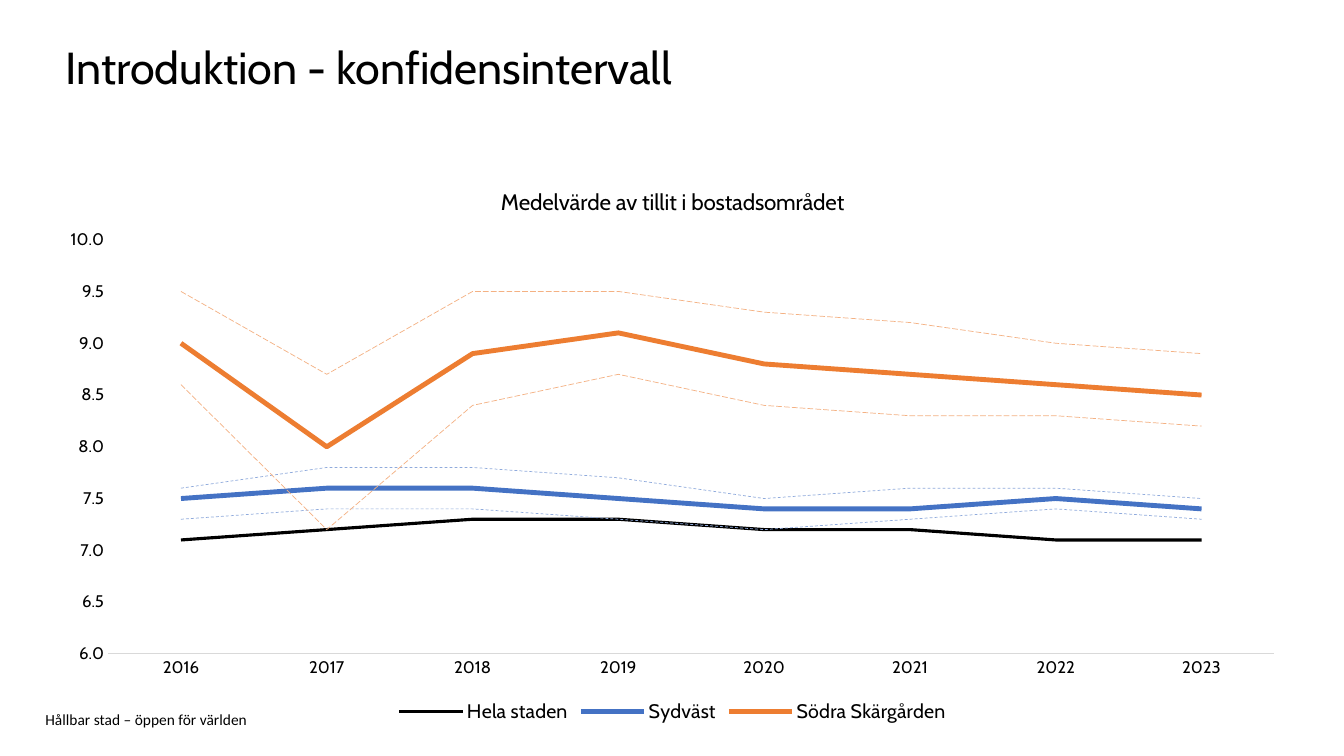
from lxml import etree
from pptx import Presentation
from pptx.chart.data import CategoryChartData
from pptx.dml.color import RGBColor
from pptx.enum import chart as ch, dml, text
from pptx.oxml import parse_xml
from pptx.oxml.ns import nsdecls, qn
from pptx.util import Inches, Pt

COLORS = {
    "text": "000000", "axis": "D9D9D9",
    "city": "000000",
    "southwest": "4472C4", "southwest_bound": "8FAADC",
    "archipelago": "ED7D31", "archipelago_bound": "F4B183",
}
DASH, LONG_DASH = dml.MSO_LINE.DASH, dml.MSO_LINE.LONG_DASH
YEARS = [str(year) for year in range(2016, 2024)]
# name, values, colour, line width, dash
TRUST = [
    ("Hela staden", (7.1, 7.2, 7.3, 7.3, 7.2, 7.2, 7.1, 7.1), "city", 2.25, None),
    ("Sydväst", (7.5, 7.6, 7.6, 7.5, 7.4, 7.4, 7.5, 7.4), "southwest", 3.5, None),
    ("Series 3", (7.3, 7.4, 7.4, 7.3, 7.2, 7.3, 7.4, 7.3), "southwest_bound", 0.5, DASH),
    ("Series 4", (7.6, 7.8, 7.8, 7.7, 7.5, 7.6, 7.6, 7.5), "southwest_bound", 0.5, DASH),
    ("Södra Skärgården", (9.0, 8.0, 8.9, 9.1, 8.8, 8.7, 8.6, 8.5), "archipelago", 3.5, None),
    ("Series 6", (8.6, 7.2, 8.4, 8.7, 8.4, 8.3, 8.3, 8.2), "archipelago_bound", 0.5, LONG_DASH),
    ("Series 7", (9.5, 8.7, 9.5, 9.5, 9.3, 9.2, 9.0, 8.9), "archipelago_bound", 0.5, LONG_DASH),
]


def set_layout(parent, index, **fractions):
    """Place a chart part by fractions of the chart area."""
    for old in parent.findall(qn("c:layout")):
        parent.remove(old)
    layout = parse_xml(f"<c:layout {nsdecls('c')}><c:manualLayout/></c:layout>")
    settings = {"xMode": "edge", "yMode": "edge", **fractions}
    if "w" in fractions:
        settings = {"layoutTarget": "inner", **settings}
    for tag, value in settings.items():
        etree.SubElement(layout[0], qn(f"c:{tag}")).set("val", str(value))
    parent.insert(index, layout)


class SlideBuilder:
    def __init__(self, presentation, font="Cabin"):
        self.font = font
        self.slide = presentation.slides.add_slide(presentation.slide_layouts[5])

    def style(self, font, size, name=None):
        values = {"name": name or self.font, "size": Pt(size), "bold": False}
        for attribute, value in values.items():
            setattr(font, attribute, value)
        font.color.rgb = RGBColor.from_string(COLORS["text"])

    def place(self, shape, box):
        for attribute, value in zip(("left", "top", "width", "height"), box):
            setattr(shape, attribute, Inches(value))

    def title(self, wording, box, size):
        heading = self.slide.shapes.title
        self.place(heading, box)
        heading.text_frame.text = wording
        heading.text_frame.vertical_anchor = text.MSO_ANCHOR.MIDDLE
        paragraph = heading.text_frame.paragraphs[0]
        paragraph.alignment = text.PP_ALIGN.LEFT
        paragraph.line_spacing = 0.9
        self.style(paragraph.runs[0].font, size)

    def footer(self, wording, box, size):
        frame = self.slide.shapes.add_textbox(*map(Inches, box)).text_frame
        settings = {"word_wrap": True, "vertical_anchor": text.MSO_ANCHOR.MIDDLE,
                    "margin_left": 0, "margin_top": 0,
                    "margin_right": 0, "margin_bottom": 0}
        for attribute, value in settings.items():
            setattr(frame, attribute, value)
        frame.text = wording
        self.style(frame.paragraphs[0].runs[0].font, size, "Calibri")

    def line_chart(self, heading, categories, rows, box):
        data = CategoryChartData(number_format="0.0")
        data.categories = categories
        for name, values, *_ in rows:
            data.add_series(name, values)
        chart = self.slide.shapes.add_chart(
            ch.XL_CHART_TYPE.LINE, *map(Inches, box), data).chart
        self.style(chart.font, 12)
        chart.plots[0].vary_by_categories = False
        for series, (_, _, color, width, dash) in zip(chart.plots[0].series, rows):
            series.smooth = False
            series.marker.style = ch.XL_MARKER_STYLE.NONE
            series.format.line.color.rgb = RGBColor.from_string(COLORS[color])
            series.format.line.width = Pt(width)
            if dash:
                series.format.line.dash_style = dash
        self.chart_title(chart, heading)
        self.axes(chart)
        self.legend(chart, [i for i, row in enumerate(rows) if row[4]])
        set_layout(chart.plots[0]._element.getparent(), 0,
                   x=0.05, y=0.14, w=0.93, h=0.73)

    def chart_title(self, chart, heading):
        chart.has_title = True
        chart.chart_title.include_in_layout = False
        frame = chart.chart_title.text_frame
        frame.text = heading
        self.style(frame.paragraphs[0].runs[0].font, 16)
        set_layout(chart.chart_title._element, 1, x=0.36, y=0.04)

    def axes(self, chart):
        years, mean = chart.category_axis, chart.value_axis
        scale = {"minimum_scale": 6, "maximum_scale": 10, "major_unit": 0.5,
                 "has_major_gridlines": False}
        for attribute, value in scale.items():
            setattr(mean, attribute, value)
        for axis in (years, mean):
            axis.major_tick_mark = axis.minor_tick_mark = ch.XL_TICK_MARK.NONE
        mean.tick_labels.number_format = "0.0"
        mean.tick_labels.number_format_is_linked = False
        mean.format.line.fill.background()
        years.format.line.color.rgb = RGBColor.from_string(COLORS["axis"])
        years.format.line.width = Pt(0.75)

    def legend(self, chart, hidden):
        chart.has_legend = True
        chart.legend.position = ch.XL_LEGEND_POSITION.BOTTOM
        chart.legend.include_in_layout = False
        self.style(chart.legend.font, 14)
        for offset, index in enumerate(hidden, 1):
            chart.legend._element.insert(offset, parse_xml(
                f'<c:legendEntry {nsdecls("c")}><c:idx val="{index}"/>'
                '<c:delete val="1"/></c:legendEntry>'))


def main():
    presentation = Presentation()
    presentation.slide_width = Inches(13.33)
    presentation.slide_height = Inches(7.5)
    builder = SlideBuilder(presentation)
    builder.footer("Hållbar stad – öppen för världen", (0.45, 7.06, 9.45, 0.16), 11)
    builder.line_chart("Medelvärde av tillit i bostadsområdet", YEARS, TRUST,
                       (0.45, 1.59, 12.44, 5.63))
    builder.title("Introduktion - konfidensintervall", (0.55, 0.27, 10.09, 0.84), 32)
    presentation.save("out.pptx")


if __name__ == "__main__":
    main()
